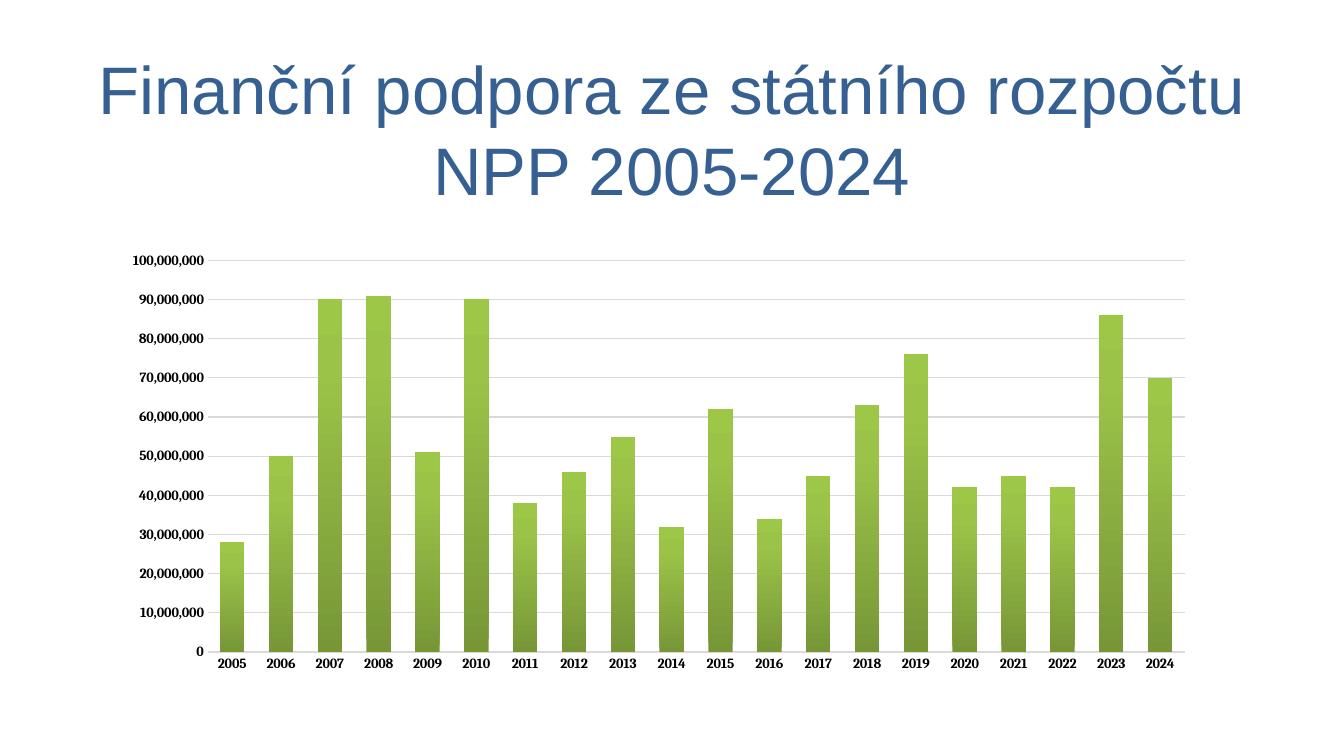
from copy import deepcopy

from lxml import etree
from pptx import Presentation
from pptx.chart.data import CategoryChartData
from pptx.dml.color import RGBColor
from pptx.enum.chart import XL_CHART_TYPE, XL_TICK_MARK
from pptx.enum.text import MSO_ANCHOR, MSO_AUTO_SIZE, PP_ALIGN
from pptx.oxml.ns import qn
from pptx.util import Pt

COLUMNS = XL_CHART_TYPE.COLUMN_CLUSTERED
NO_TICK = XL_TICK_MARK.NONE
CENTER = PP_ALIGN.CENTER
MIDDLE = MSO_ANCHOR.MIDDLE
FIXED_SIZE = MSO_AUTO_SIZE.NONE
TITLE_ONLY = 5

COLORS = {
    "title": "376092",
    "text": "000000",
    "grid": "D9D9D9",
    "bar_bottom": "779737",
    "bar_middle": "9BC348",
    "bar_top": "9DC746",
}
BAR_STOPS = [(0, "bar_bottom"), (0.8, "bar_middle"), (1, "bar_top")]
PLOT_AREA = {"x": 0.09, "y": 0.04, "w": 0.89, "h": 0.9}
FIRST_YEAR = 2005
SUPPORT_MILLIONS = [28, 50, 90, 91, 51, 90, 38, 46, 55, 32,
                    62, 34, 45, 63, 76, 42, 45, 42, 86, 70]


def color(name):
    return RGBColor.from_string(COLORS[name])


def style_font(font, name, size, color_name, bold=False):
    font.name = name
    font.size = Pt(size)
    font.bold = bold
    font.color.rgb = color(color_name)


def add_title(page, left, top, width, height):
    title = page.shapes.title
    title.left, title.top = Pt(left), Pt(top)
    title.width, title.height = Pt(width), Pt(height)
    frame = title.text_frame
    frame.text = "Finanční podpora ze státního rozpočtu NPP 2005-2024"
    frame.word_wrap = True
    frame.auto_size = FIXED_SIZE
    frame.vertical_anchor = MIDDLE
    para = frame.paragraphs[0]
    para.alignment = CENTER
    style_font(para.runs[0].font, "Arial", 48, "title")


def fill_bars(series):
    fill = series.format.fill
    fill.gradient()
    fill.gradient_angle = 90
    stop_list = series._element.find(".//" + qn("a:gsLst"))
    stop_list.append(deepcopy(stop_list[-1]))
    for stop, (position, name) in zip(fill.gradient_stops, BAR_STOPS):
        stop.position = position
        stop.color.rgb = color(name)


def place_plot(chart):
    plot_area = chart._chartSpace.find(".//" + qn("c:plotArea"))
    layout = plot_area.find(qn("c:layout"))
    if layout is None:
        layout = etree.Element(qn("c:layout"))
        plot_area.insert(0, layout)
    manual = etree.SubElement(layout, qn("c:manualLayout"))
    settings = {"layoutTarget": "inner", "xMode": "edge", "yMode": "edge", **PLOT_AREA}
    for tag, value in settings.items():
        etree.SubElement(manual, qn("c:" + tag)).set("val", str(value))


def style_axes(chart):
    for axis in (chart.category_axis, chart.value_axis):
        axis.major_tick_mark = NO_TICK
        axis.minor_tick_mark = NO_TICK
        style_font(axis.tick_labels.font, "Cambria", 10, "text", bold=True)
    year_line = chart.category_axis.format.line
    year_line.width = Pt(1)
    year_line.color.rgb = color("grid")

    amounts = chart.value_axis
    amounts.minimum_scale = 0
    amounts.maximum_scale = 100_000_000
    amounts.major_unit = 10_000_000
    amounts.tick_labels.number_format = "#,##0"
    amounts.tick_labels.number_format_is_linked = False
    amounts.format.line.fill.background()
    amounts.has_major_gridlines = True
    grid_line = amounts.major_gridlines.format.line
    grid_line.width = Pt(0.75)
    grid_line.color.rgb = color("grid")


def add_support_chart(page, left, top, width, height):
    data = CategoryChartData(number_format="#,##0")
    data.categories = [str(FIRST_YEAR + index) for index in range(len(SUPPORT_MILLIONS))]
    data.add_series("Series 1", [value * 1_000_000 for value in SUPPORT_MILLIONS])
    chart = page.shapes.add_chart(
        COLUMNS, Pt(left), Pt(top), Pt(width), Pt(height), data).chart
    chart.has_title = False
    chart.has_legend = False
    style_font(chart.font, "Cambria", 10, "text")
    plot = chart.plots[0]
    plot.vary_by_categories = False
    plot.gap_width = 100
    plot.overlap = -24
    fill_bars(plot.series[0])
    style_axes(chart)
    place_plot(chart)


def main():
    deck = Presentation()
    deck.slide_width, deck.slide_height = Pt(960), Pt(540)
    page = deck.slides.add_slide(deck.slide_layouts[TITLE_ONLY])
    add_title(page, 57.6, 34.5, 844.8, 114)
    add_support_chart(page, 77.8, 173.5, 784, 311)
    deck.save("out.pptx")


if __name__ == "__main__":
    main()
